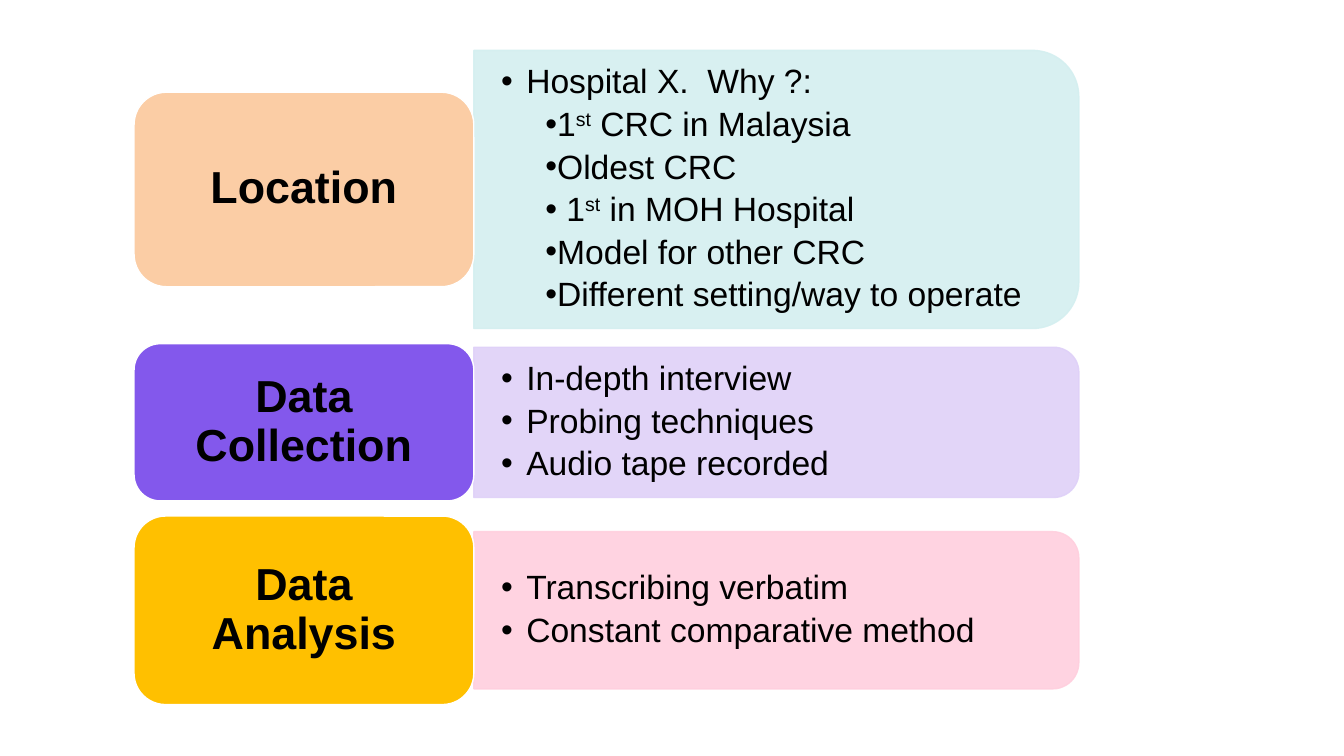
from lxml import etree
from pptx import Presentation
from pptx.dml.color import RGBColor
from pptx.enum.shapes import MSO_SHAPE
from pptx.enum.text import MSO_ANCHOR, PP_ALIGN
from pptx.oxml.ns import qn
from pptx.util import Inches, Pt

ROUNDED = MSO_SHAPE.ROUNDED_RECTANGLE
ROUNDED_END = MSO_SHAPE.ROUND_2_SAME_RECTANGLE
MIDDLE = MSO_ANCHOR.MIDDLE
CENTER = PP_ALIGN.CENTER

# Content: bullets are (nested, text); text between ^ marks is superscript
ROWS = [
    dict(label="Location", label_color="FBCDA5", label_height=1.93,
         panel_color="D4EFF0", panel_height=2.76,
         bullets=[(False, "Hospital X.  Why ?:"),
                  (True, "1^st^ CRC in Malaysia"),
                  (True, "Oldest CRC"),
                  (True, " 1^st^ in MOH Hospital"),
                  (True, "Model for other CRC"),
                  (True, "Different setting/way to operate")]),
    dict(label="Data Collection", label_color="8358EC", label_height=1.56,
         panel_color="DFD1F8", panel_height=1.49,
         bullets=[(False, "In-depth interview"),
                  (False, "Probing techniques"),
                  (False, "Audio tape recorded")]),
    dict(label="Data Analysis", label_color="FFC000", label_height=1.87,
         panel_color="FFCFDE", panel_height=1.56,
         bullets=[(False, "Transcribing verbatim"),
                  (False, "Constant comparative method")]),
]

# Layout in inches
TOP, ROW_GAP = 0.5, 0.15
LABEL_LEFT, LABEL_WIDTH = 1.33, 3.37
PANEL_LEFT, PANEL_WIDTH = LABEL_LEFT + LABEL_WIDTH, 6.0
TEXT_WIDTH = 5.9


def color(hex_text):
    return RGBColor.from_string(hex_text)


def add_block(kind, left, top, width, height, fill, line):
    shape = slide.shapes.add_shape(
        kind, Inches(left), Inches(top), Inches(width), Inches(height))
    shape.shadow.inherit = False
    shape.fill.solid()
    shape.fill.fore_color.rgb = color(fill)
    shape.line.color.rgb = color(line)
    shape.line.width = Pt(1)
    return shape


def set_frame(frame, side, end):
    frame.word_wrap = True
    frame.vertical_anchor = MIDDLE
    frame.margin_left = frame.margin_right = Inches(side)
    frame.margin_top = frame.margin_bottom = Inches(end)


def set_font(paragraph, size, bold=False):
    paragraph.line_spacing = 0.9
    font = paragraph.font
    font.name, font.size, font.bold = "Arial", Pt(size), bold
    font.color.rgb = color("000000")


def add_panel(middle, height, fill):
    # A quarter turn brings the two rounded corners to the right
    panel = add_block(ROUNDED_END, PANEL_LEFT + (PANEL_WIDTH - height) / 2,
                      middle - PANEL_WIDTH / 2, height, PANEL_WIDTH, fill, fill)
    panel.rotation = 90
    for swatch in panel._element.spPr.iter(qn("a:srgbClr")):
        etree.SubElement(swatch, qn("a:alpha")).set("val", "90000")


def add_bullets(middle, height, bullets):
    box = slide.shapes.add_textbox(
        Inches(PANEL_LEFT), Inches(middle - height / 2),
        Inches(TEXT_WIDTH), Inches(height))
    frame = box.text_frame
    set_frame(frame, 0.27, 0.14)
    for index, (nested, text) in enumerate(bullets):
        paragraph = frame.add_paragraph() if index else frame.paragraphs[0]
        paragraph.level = 1
        paragraph.space_after = Pt(4.5)
        properties = paragraph._p.get_or_add_pPr()
        properties.set("marL", str(Inches(0.44 if nested else 0.25)))
        properties.set("indent", str(Inches(0 if nested else -0.25)))
        etree.SubElement(properties, qn("a:buFont")).set("typeface", "Arial")
        etree.SubElement(properties, qn("a:buChar")).set("char", "•")
        set_font(paragraph, 24)
        for part, words in enumerate(text.split("^")):
            run = paragraph.add_run()
            run.text = words
            if part % 2:
                run._r.get_or_add_rPr().set("baseline", "30000")


def add_label(middle, height, fill, text):
    label = add_block(ROUNDED, LABEL_LEFT, middle - height / 2,
                      LABEL_WIDTH, height, fill, "FFFFFF")
    set_frame(label.text_frame, 0.2, 0.15)
    paragraph = label.text_frame.paragraphs[0]
    paragraph.text = text
    paragraph.alignment = CENTER
    set_font(paragraph, 32, bold=True)


presentation = Presentation()
presentation.slide_width, presentation.slide_height = Inches(13.33), Inches(7.5)
slide = presentation.slides.add_slide(presentation.slide_layouts[6])

# Rows: the taller of label and panel sets the row height, both are centred
top = TOP
for row in ROWS:
    row_height = max(row["label_height"], row["panel_height"])
    middle = top + row_height / 2
    add_panel(middle, row["panel_height"], row["panel_color"])
    add_bullets(middle, row["panel_height"], row["bullets"])
    add_label(middle, row["label_height"], row["label_color"], row["label"])
    top += row_height + ROW_GAP

presentation.save("out.pptx")
